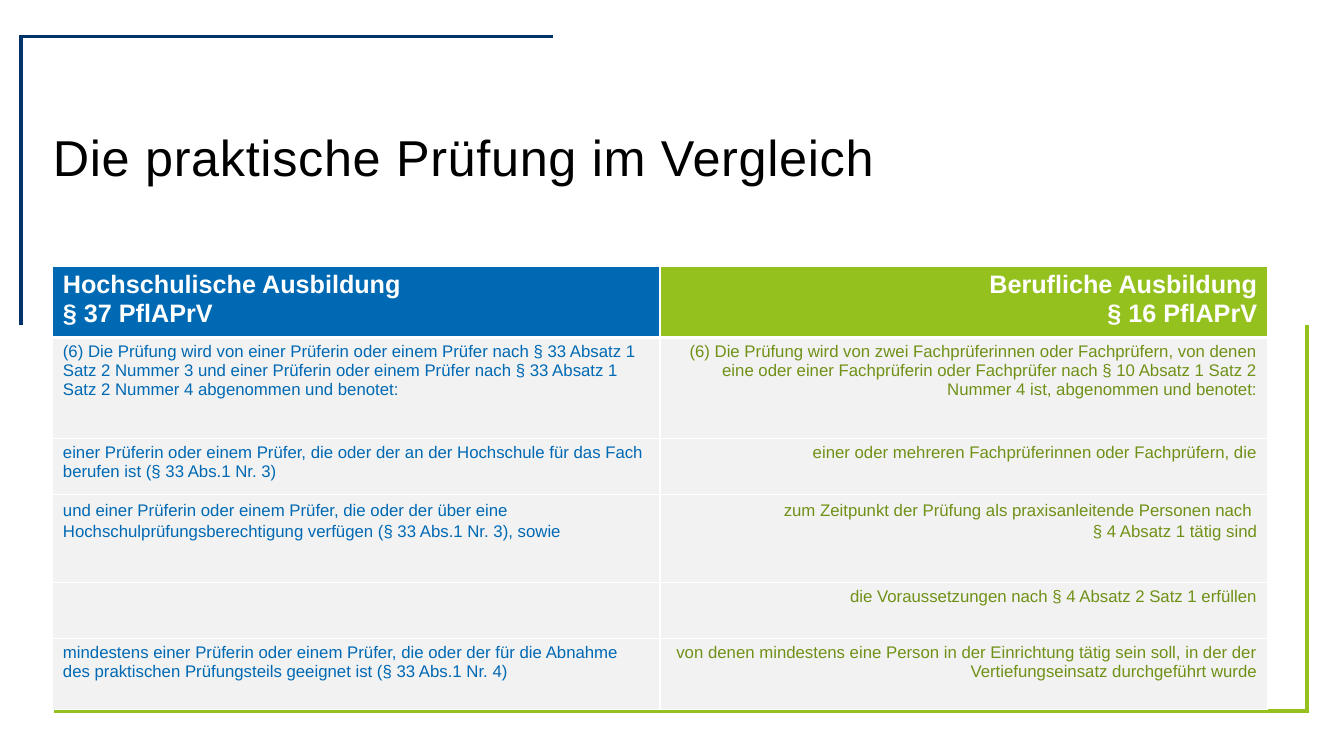
"""Build a slide comparing the practical examinations of two training paths."""
from copy import deepcopy

from lxml import etree
from pptx import Presentation
from pptx.dml.color import RGBColor
from pptx.enum.text import MSO_ANCHOR, MSO_AUTO_SIZE, PP_ALIGN
from pptx.oxml.ns import qn
from pptx.util import Pt

LEFT, RIGHT = PP_ALIGN.LEFT, PP_ALIGN.RIGHT
MIDDLE = MSO_ANCHOR.MIDDLE
NO_AUTOFIT = MSO_AUTO_SIZE.NONE
NAVY, BLUE, GREEN, OLIVE = "003369", "0069B4", "95C11F", "709117"
WHITE, BLACK, PALE = "FFFFFF", "000000", "F2F2F2"
NO_STYLE_NO_GRID = "{2D5ABB26-0587-4C30-8999-92F81FD0307C}"


def write(frame, lines, size=12, color=BLACK, bold=False, align=LEFT, line=1.0,
          tracking=0, soft_breaks=False):
    para = frame.paragraphs[0]
    for index, words in enumerate(lines.split("\n")):
        if index and soft_breaks:
            para.add_line_break()
            para._p[-1].append(deepcopy(span.font._element))
        elif index:
            para = frame.add_paragraph()
        para.alignment = align
        para.line_spacing = line
        span = para.add_run()
        span.text = words
        span.font.name = "Arial"
        span.font.size = Pt(size)
        span.font.bold = bold
        span.font.color.rgb = RGBColor.from_string(color)
        if tracking:
            span.font._element.set("spc", str(round(tracking * 100)))


def set_borders(cell, **borders):
    properties = cell._tc.get_or_add_tcPr()
    for index, side in enumerate("LRTB"):
        color, width = borders.get(side, (None, 0))
        edge = etree.Element(qn(f"a:ln{side}"), w=str(Pt(width)))
        if color:
            fill = etree.SubElement(edge, qn("a:solidFill"))
            etree.SubElement(fill, qn("a:srgbClr"), val=color)
        else:
            etree.SubElement(edge, qn("a:noFill"))
        properties.insert(index, edge)


deck = Presentation()
deck.slide_width, deck.slide_height = Pt(960), Pt(540)
page = deck.slides.add_slide(deck.slide_layouts[5])

frame_widths, frame_heights = [23, 357, 538.5], [206, 276]
border_frame = page.shapes.add_table(2, 3, Pt(15.25), Pt(26), Pt(sum(frame_widths)),
                                     Pt(sum(frame_heights))).table
border_frame._tbl.tblPr.find(qn("a:tableStyleId")).text = NO_STYLE_NO_GRID
border_frame.first_row = border_frame.horz_banding = False
for column, width in enumerate(frame_widths):
    border_frame.columns[column].width = Pt(width)
for row, height in enumerate(frame_heights):
    border_frame.rows[row].height = Pt(height)
border_frame.cell(0, 0).merge(border_frame.cell(0, 1))
border_frame.cell(1, 1).merge(border_frame.cell(1, 2))
navy_edge, green_edge = (NAVY, 3), (GREEN, 3)
corner_borders = {
    (0, 0): {"L": navy_edge, "T": navy_edge},
    (0, 1): {"T": navy_edge},
    (1, 1): {"R": green_edge, "B": green_edge},
    (1, 2): {"R": green_edge, "B": green_edge},
}
for row in range(2):
    for column in range(3):
        cell = border_frame.cell(row, column)
        set_borders(cell, **corner_borders.get((row, column), {}))
        cell.fill.background()

title = page.shapes.title
title.left, title.top, title.width, title.height = Pt(37.75), Pt(94), Pt(873), Pt(47)
frame = title.text_frame
frame.margin_left = frame.margin_top = frame.margin_right = 0
frame.margin_bottom = Pt(6)
frame.vertical_anchor = MIDDLE
frame.auto_size = NO_AUTOFIT
frame.word_wrap = True
write(frame, "Die praktische Prüfung im Vergleich", size=36, line=0.9, tracking=0.5)

rows = [
    (51, "Hochschulische Ausbildung\n§ 37 PflAPrV",
     "Berufliche Ausbildung\n§ 16 PflAPrV"),
    (72, "(6) Die Prüfung wird von einer Prüferin oder einem Prüfer nach § 33 Absatz 1 "
         "Satz 2 Nummer 3 und einer Prüferin oder einem Prüfer nach § 33 Absatz 1 "
         "Satz 2 Nummer 4 abgenommen und benotet:",
     "(6) Die Prüfung wird von zwei Fachprüferinnen oder Fachprüfern, von denen eine oder "
     "einer Fachprüferin oder Fachprüfer nach § 10 Absatz 1 Satz 2 Nummer 4 ist, "
     "abgenommen und benotet:"),
    (40, "einer Prüferin oder einem Prüfer, die oder der an der Hochschule für das Fach "
         "berufen ist (§ 33 Abs.1 Nr. 3)",
     "einer oder mehreren Fachprüferinnen oder Fachprüfern, die"),
    (63, "und einer Prüferin oder einem Prüfer, die oder der über eine "
         "Hochschulprüfungsberechtigung verfügen (§ 33 Abs.1 Nr. 3), sowie",
     "zum Zeitpunkt der Prüfung als praxisanleitende Personen nach \n§ 4 Absatz 1 tätig sind"),
    (40, "", "die Voraussetzungen nach § 4 Absatz 2 Satz 1 erfüllen"),
    (51, "mindestens einer Prüferin oder einem Prüfer, die oder der für die Abnahme des "
         "praktischen Prüfungsteils geeignet ist (§ 33 Abs.1 Nr. 4)",
     "von denen mindestens eine Person in der Einrichtung tätig sein soll, in der der "
     "Vertiefungseinsatz durchgeführt wurde"),
]
columns = [(BLUE, BLUE, LEFT), (GREEN, OLIVE, RIGHT)]
SPACED_ROW = 3

table_height = sum(height for height, *_ in rows)
table = page.shapes.add_table(len(rows), len(columns), Pt(37.75), Pt(190),
                              Pt(867.5), Pt(table_height)).table
table.horz_banding = False
thin, thick = (WHITE, 1), (WHITE, 3)
for row, (height, *texts) in enumerate(rows):
    table.rows[row].height = Pt(height)
    for column, (header_fill, body_color, align) in enumerate(columns):
        cell = table.cell(row, column)
        set_borders(cell, L=thin, R=thin, T=thick if row == 1 else thin,
                    B=thin if row else thick)
        cell.fill.solid()
        cell.fill.fore_color.rgb = RGBColor.from_string(PALE if row else header_fill)
        if texts[column]:
            write(cell.text_frame, texts[column], size=12 if row else 18,
                  color=body_color if row else WHITE, bold=row == 0, align=align,
                  line=1.1 if row == SPACED_ROW else 1.0, soft_breaks=row > 0)

deck.save("out.pptx")
